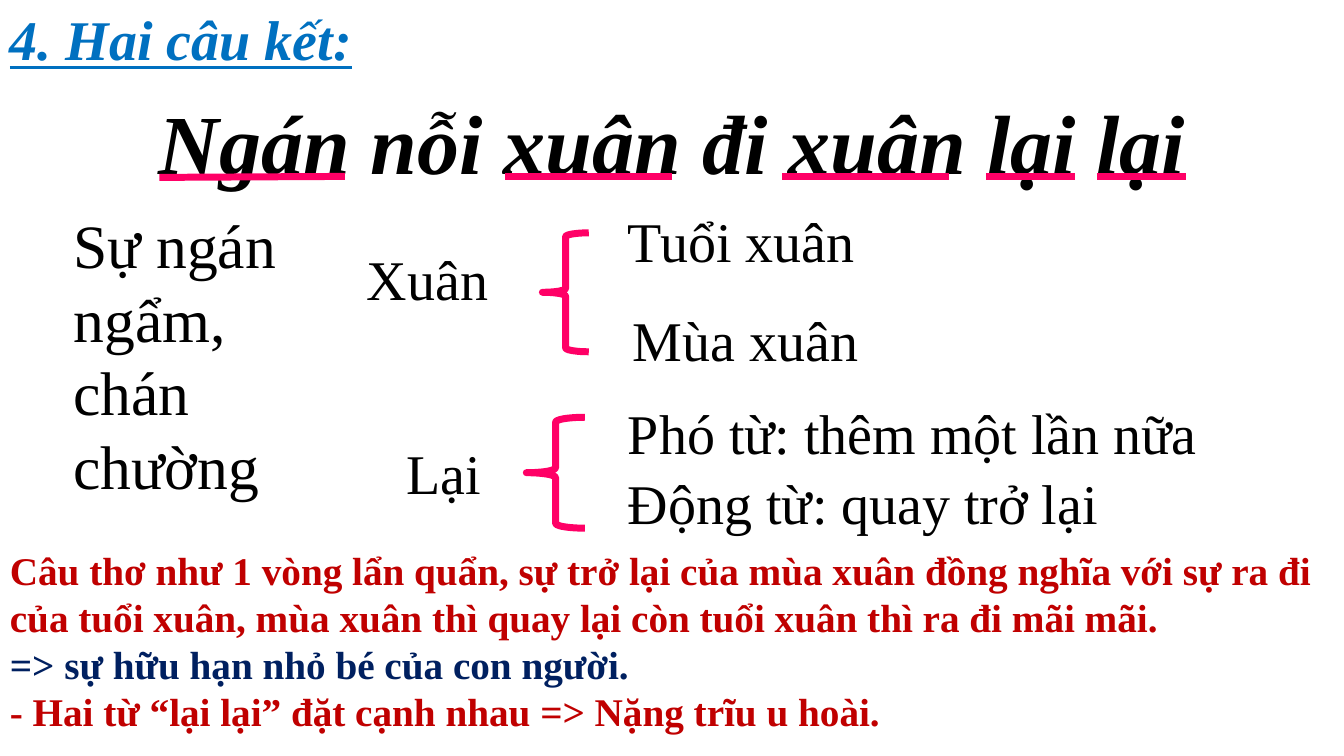
from dataclasses import dataclass

from lxml import etree
from pptx import Presentation
from pptx.dml.color import RGBColor
from pptx.enum.shapes import MSO_CONNECTOR, MSO_SHAPE
from pptx.enum.text import PP_ALIGN
from pptx.oxml.ns import qn
from pptx.util import Pt

PX = 9144  # 100 px to the inch
WIDTH, HEIGHT = 1333, 750
FONT = "Times New Roman"
STROKE = 5
LEFT, CENTER = PP_ALIGN.LEFT, PP_ALIGN.CENTER
STRAIGHT, BRACE = MSO_CONNECTOR.STRAIGHT, MSO_SHAPE.LEFT_BRACE
COLORS = {
    "black": "000000",
    "blue": "0070C0",
    "navy": "002060",
    "red": "C00000",
    "pink": "FF0066",
}


@dataclass
class Para:
    text: str
    size: int = 40
    color: str = "black"
    bold: bool = False
    italic: bool = False
    under: bool = False
    align: PP_ALIGN = LEFT
    before: int = 0


@dataclass
class Block:
    left: int
    top: int
    width: int
    height: int
    paras: list[Para]


@dataclass
class Brace:
    left: int
    top: int
    width: int
    height: int


@dataclass
class Rule:
    """An underline beneath one word of the verse."""
    start: int
    end: int
    rise: int = 0


VERSE = Block(0, 0, WIDTH, HEIGHT, [
    Para("4. Hai câu kết:", 40, "blue", True, True, True),
    Para("Ngán nỗi xuân đi xuân lại lại", 60, "black", True, True,
         align=CENTER, before=13),
])
NOTES = [
    Block(63, 200, 253, 306, [Para("Sự ngán ngẩm, chán chường", 44)]),
    Block(354, 238, 155, 77, [Para("Xuân")]),
    Block(613, 200, 284, 77, [Para("Tuổi xuân")]),
    Block(618, 298, 274, 77, [Para("Mùa xuân")]),
    Block(393, 430, 96, 77, [Para("Lại")]),
    Block(613, 390, 614, 77, [Para("Phó từ: thêm một lần nữa")]),
    Block(613, 460, 516, 77, [Para("Động từ: quay trở lại")]),
    Block(0, 537, WIDTH, 239, [
        Para("Câu thơ như 1 vòng lẩn quẩn, sự trở lại của mùa xuân đồng nghĩa "
             "với sự ra đi của tuổi xuân, mùa xuân thì quay lại còn tuổi xuân "
             "thì ra đi mãi mãi.", 28, "red", True),
        Para("=> sự hữu hạn nhỏ bé của con người.", 28, "navy", True),
        Para("- Hai từ “lại lại” đặt cạnh nhau => Nặng trĩu u hoài.",
             28, "red", True),
    ]),
]
RULE_TOP = 175
RULES = [Rule(158, 342, 1), Rule(501, 667), Rule(776, 941),
         Rule(978, 1066), Rule(1088, 1176)]
BRACES = [Brace(538, 231, 46, 118), Brace(522, 414, 58, 110)]


def tint(name: str) -> RGBColor:
    return RGBColor.from_string(COLORS[name])


def add_block(slide, block: Block) -> None:
    box = slide.shapes.add_textbox(block.left * PX, block.top * PX,
                                   block.width * PX, block.height * PX)
    frame = box.text_frame
    frame.word_wrap = True
    frame.text = "\n".join(item.text for item in block.paras)
    for para, item in zip(frame.paragraphs, block.paras):
        para.alignment = item.align
        para.space_before = Pt(item.before)
        font = para.runs[0].font
        font.name = FONT
        font.size = Pt(item.size)
        font.bold = item.bold
        font.italic = item.italic
        font.underline = item.under
        font.color.rgb = tint(item.color)


def ink(shape) -> None:
    """Give a line or an outline the pink stroke."""
    shape.line.color.rgb = tint("pink")
    shape.line.width = Pt(STROKE)


def add_rule(slide, rule: Rule) -> None:
    line = slide.shapes.add_connector(
        STRAIGHT, rule.start * PX, (RULE_TOP + rule.rise) * PX,
        rule.end * PX, RULE_TOP * PX)
    ink(line)
    etree.SubElement(line._element.spPr, qn("a:effectLst"))


def add_brace(slide, brace: Brace) -> None:
    shape = slide.shapes.add_shape(BRACE, brace.left * PX, brace.top * PX,
                                   brace.width * PX, brace.height * PX)
    shape.shadow.inherit = False
    shape.fill.background()
    ink(shape)


def main() -> None:
    deck = Presentation()
    deck.slide_width, deck.slide_height = WIDTH * PX, HEIGHT * PX
    slide = deck.slides.add_slide(deck.slide_layouts[6])
    add_block(slide, VERSE)
    for rule in RULES:
        add_rule(slide, rule)
    for brace in BRACES:
        add_brace(slide, brace)
    for note in NOTES:
        add_block(slide, note)
    deck.save("out.pptx")


if __name__ == "__main__":
    main()
